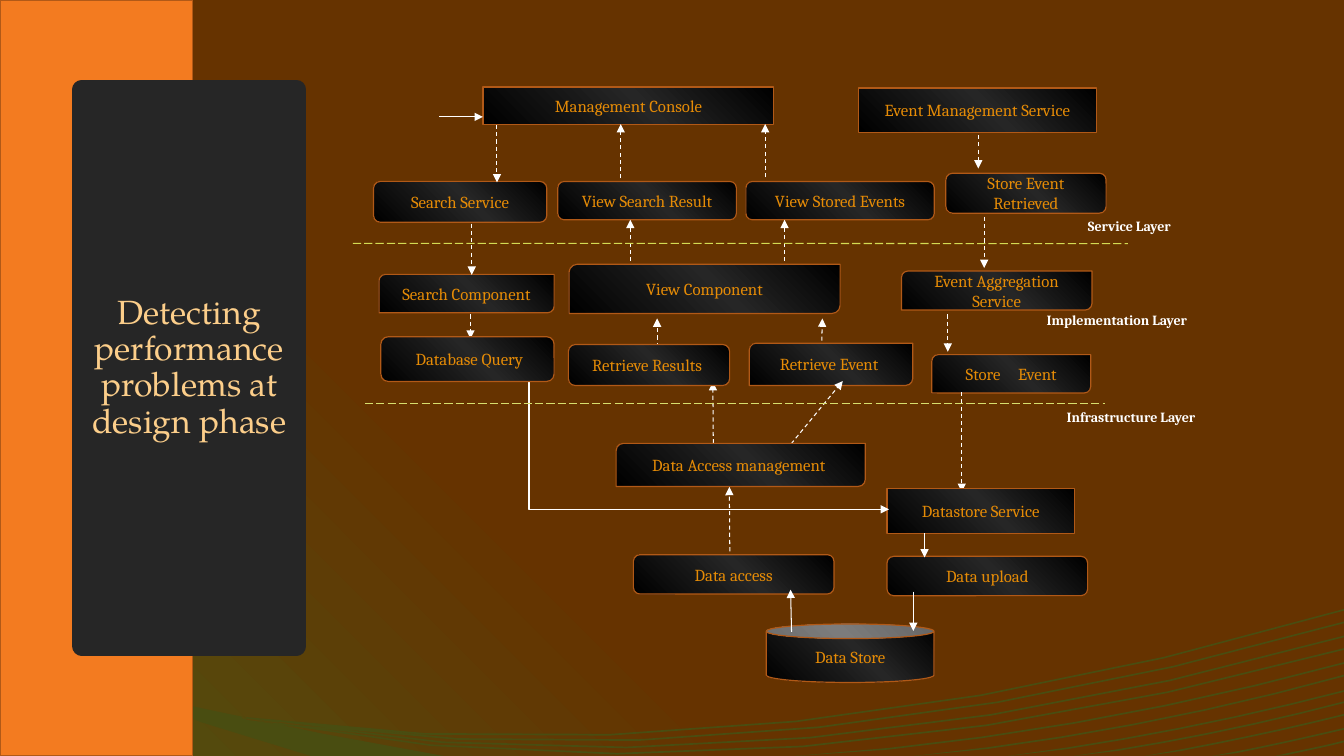
import lxml.etree
import pptx
import pptx.dml.color
import pptx.enum.dml
import pptx.enum.shapes
import pptx.enum.text
import pptx.oxml.ns
import pptx.util

Pt = pptx.util.Pt
qn = pptx.oxml.ns.qn
KIND = pptx.enum.shapes.MSO_SHAPE
LINK = pptx.enum.shapes.MSO_CONNECTOR
DASH = pptx.enum.dml.MSO_LINE
ANCHOR = pptx.enum.text.MSO_ANCHOR
WIDTH, HEIGHT = 960, 540

COLORS = {
    "brown": "663300", "olive": "4E5212", "wave": "494D11", "black": "000000",
    "coal": "262626", "rust": "B15917", "amber": "E58B06", "white": "FFFFFF",
    "lime": "D3DB53", "pale": "D7DF6D", "orange": "F37B20", "peach": "FCCE8A",
}


def color(name):
    return pptx.dml.color.RGBColor.from_string(COLORS[name])


def add_tag(parent, tag, **values):
    return lxml.etree.SubElement(parent, qn(tag), values)


def write(frame, text, size=12, font="Cambria", ink="amber", bold=False,
          anchor=ANCHOR.MIDDLE, spacing=None, split=False):
    frame.word_wrap = True
    frame.vertical_anchor = anchor
    line = frame.paragraphs[0]
    line.alignment = pptx.enum.text.PP_ALIGN.CENTER
    line.line_spacing = spacing
    for piece in text.partition(" ") if split else [text]:
        run = line.add_run()
        run.text = piece
        run.font.size = Pt(size)
        run.font.name = font
        run.font.bold = bold
        run.font.color.rgb = color(ink)


def curve(ends, steps=6):
    points = []
    for step in range(steps + 1):
        t = step / steps
        parts = ((1 - t) ** 3, 3 * t * (1 - t) ** 2, 3 * t * t * (1 - t), t ** 3)
        points.append(tuple(sum(p * end[axis] for p, end in zip(parts, ends))
                            for axis in (0, 1)))
    return points


def strip(ends, depth=1.2):
    top = curve(ends)
    return top + [(x, min(y + depth, HEIGHT)) for x, y in reversed(top)]


class Canvas:
    edge = 0.85
    stroke = 0.75

    def __init__(self, slide):
        self.slide = slide
        self.shapes = slide.shapes

    def blend(self, owner, fill, stops):
        fill.gradient()
        fill.gradient_angle = 225
        holder = next(owner.element.iter(qn("a:gsLst")))
        for stop in list(holder):
            holder.remove(stop)
        for place, name in stops:
            stop = add_tag(holder, "a:gs", pos=str(place * 1000))
            add_tag(stop, "a:srgbClr", val=COLORS[name])

    def backdrop(self, stops):
        self.blend(self.slide, self.slide.background.fill, stops)

    def waves(self, rings):
        first, *rest = [[(Pt(x), Pt(y)) for x, y in ring] for ring in rings]
        pen = self.shapes.build_freeform(*first[0], scale=1)
        pen.add_line_segments(first[1:], close=True)
        for ring in rest:
            pen.move_to(*ring[0])
            pen.add_line_segments(ring[1:], close=True)
        shape = pen.convert_to_shape()
        shape.shadow.inherit = False
        shape.fill.solid()
        shape.fill.fore_color.rgb = color("wave")
        shape.line.fill.background()

    def panel(self, place, fill, line, width):
        shape = self.shapes.add_shape(KIND.RECTANGLE, *map(Pt, place))
        shape.shadow.inherit = False
        shape.fill.solid()
        shape.fill.fore_color.rgb = color(fill)
        shape.line.color.rgb = color(line)
        shape.line.width = Pt(width)
        add_tag(next(shape.element.iter(qn("a:ln"))), "a:round")
        return shape

    def node(self, kind, text, *place, gap=0):
        shape = self.shapes.add_shape(kind, *map(Pt, place))
        shape.shadow.inherit = False
        self.blend(shape, shape.fill, [(0, "black"), (45, "coal"), (100, "black")])
        shape.line.color.rgb = color("rust")
        shape.line.width = Pt(self.edge)
        write(shape.text_frame, text, split=gap > 0)
        if gap:
            space = list(shape.element.iter(qn("a:rPr")))[1]
            space.set("spc", str(gap * 100))

    def line(self, ends, ink="white", dash=None, arrow=True, bend=None):
        kind = LINK.STRAIGHT if bend is None else LINK.ELBOW
        link = self.shapes.add_connector(kind, *map(Pt, ends))
        link.line.color.rgb = color(ink)
        link.line.width = Pt(self.stroke)
        if dash:
            link.line.dash_style = dash
        if arrow:
            add_tag(next(link.element.iter(qn("a:ln"))), "a:tailEnd", type="triangle")
        if bend is not None:
            guides = next(link.element.iter(qn("a:avLst")))
            add_tag(guides, "a:gd", name="adj1", fmla=f"val {round(bend * 1000)}")
        add_tag(link.element.spPr, "a:effectLst")

    def label(self, text, *place):
        box = self.shapes.add_textbox(*map(Pt, place))
        write(box.text_frame, text, size=10, ink="white", bold=True, anchor=ANCHOR.TOP)


WAVES = [
    ((173, 512), (432, 547), (706, 510), (960, 435)),
    ((199, 515.5), (454, 551), (719, 513), (960, 444)),
    ((186, 514), (445, 558), (715, 523), (960, 454)),
    ((176, 513), (438, 564), (712, 531), (960, 463)),
    ((568, 540), (702, 531), (834, 507), (960, 473)),
    ((653, 540), (759, 529), (862, 509), (960, 482)),
    ((720, 540), (803, 529), (883, 513), (960, 493)),
    ((767, 540), (830, 531), (895, 518), (960, 501)),
    ((818, 540), (868, 531), (916, 521), (960, 510)),
    ((866, 540), (899, 534), (930, 527), (960, 520)),
    ((911, 540), (928, 536), (945, 533), (960, 529)),
]
SWELL = [(0, 451), (41, 470), (84, 488), (130, 503), (173, 512), (230, 524),
         (317, 540), (222, 540), (144, 516), (106, 501), (0, 487)]

SQUARE, ROUND, LEAF = KIND.RECTANGLE, KIND.ROUNDED_RECTANGLE, KIND.ROUND_2_DIAG_RECTANGLE
NODES = [
    (ROUND, "Data access", 452.4, 396.2, 143.3, 28.1),
    (ROUND, "Data upload", 633.6, 397.4, 143.3, 28.1),
    (KIND.CAN, "Data Store", 547.4, 445.7, 119.8, 41.8),
    (SQUARE, "Management Console", 345, 62.1, 207.8, 26.8),
    (SQUARE, "Event Management Service", 613.5, 62.9, 169.5, 31.8),
    (ROUND, "Search Service", 266.8, 129.6, 123.8, 29.2),
    (ROUND, "View Search Result", 398.4, 129.6, 127.6, 27.4),
    (ROUND, "View Stored Events", 532.8, 129.6, 134.6, 27.4),
    (ROUND, "Store Event Retrieved", 675.6, 123.7, 114.5, 28.6),
    (LEAF, "Search Component", 270.7, 196, 125.1, 27.4),
    (LEAF, "View Component", 406.4, 188.8, 193.7, 35.2),
    (LEAF, "Event Aggregation Service", 643.9, 193.6, 136.1, 27.8),
    (LEAF, "Retrieve Event ", 535.2, 245.1, 116.8, 30.2),
]
FLOWS = [
    (313.9, 83.5, 344.9, 83.5, None), (355, 89.3, 355, 130.3), (443.4, 127.4, 443.4, 88.6),
    (546.6, 126.7, 546.6, 88.6), (337, 159.8, 337, 196.3), (450.2, 186.5, 450.2, 157),
    (560.4, 186.5, 560.4, 157), (698.8, 96.5, 698.8, 120.4), (336.1, 224.6, 336.1, 241.9),
    (469.4, 247.7, 469.4, 227.5), (587, 243.4, 587.4, 227.5), (677, 224.6, 677, 251.3),
    (509.6, 326.9, 509.2, 272.9), (542.2, 344.9, 602, 272.2), (687, 280.1, 687, 351.4),
]
STORES = [
    (LEAF, "Data Access management ", 440.1, 316.7, 178, 30.8),
    (SQUARE, "Datastore Service", 633.6, 348.8, 133.9, 32.2),
]
QUERIES = [
    (ROUND, " Database Query", 272, 240.5, 123.8, 32),
    (ROUND, "Retrieve Results ", 406, 246.1, 115.2, 29.3),
]
RISES = [(521.3, 393.8, 521, 347.8), (703, 154.8, 703, 191.5)]
CALLS = [
    (565.4, 451.4, 564.7, 421.2), (652.4, 422.6, 652.4, 450.7), (660.4, 380.9, 660.4, 398.2),
]


def main():
    deck = pptx.Presentation()
    deck.slide_width, deck.slide_height = Pt(WIDTH), Pt(HEIGHT)
    canvas = Canvas(deck.slides.add_slide(deck.slide_layouts[6]))
    canvas.backdrop([(0, "brown"), (64, "brown"), (100, "olive")])
    canvas.waves([SWELL] + [strip(ends) for ends in WAVES])
    canvas.label("Service Layer ", 750.2, 151.9, 115.2, 20.9)

    for node in NODES:
        canvas.node(*node)
    canvas.node(LEAF, "Store Event", 665.6, 253.3, 113.5, 27.4, gap=10)
    for x1, y1, x2, y2, *plain in FLOWS:
        canvas.line((x1, y1, x2, y2), dash=None if plain else DASH.DASH)
    for node in STORES:
        canvas.node(*node)
    canvas.line((298, 249.8, 635, 363.8), bend=23.66)
    for node in QUERIES:
        canvas.node(*node)
    for ends in RISES:
        canvas.line(ends, dash=DASH.DASH)
    for ends in CALLS:
        canvas.line(ends)

    canvas.line((252, 173.8, 805.7, 174), ink="lime", dash=DASH.LONG_DASH, arrow=False)
    canvas.line((260.6, 288.5, 789.1, 288.5), ink="pale", dash=DASH.LONG_DASH, arrow=False)
    canvas.label("Implementation Layer ", 722.9, 218.9, 151.9, 20.9)
    canvas.label("Infrastructure Layer", 745.5, 288.5, 124.6, 17.3)

    canvas.panel((0, 0, 137.8, HEIGHT), "orange", "rust", canvas.edge)
    title = canvas.panel((58.5, 64, 153.4, 397.5), "coal", "coal", 13.75)
    write(title.text_frame, "Detecting performance problems at design phase",
          size=24, font="TeX Gyre Pagella", ink="peach", spacing=0.9)
    deck.save("out.pptx")


if __name__ == "__main__":
    main()
